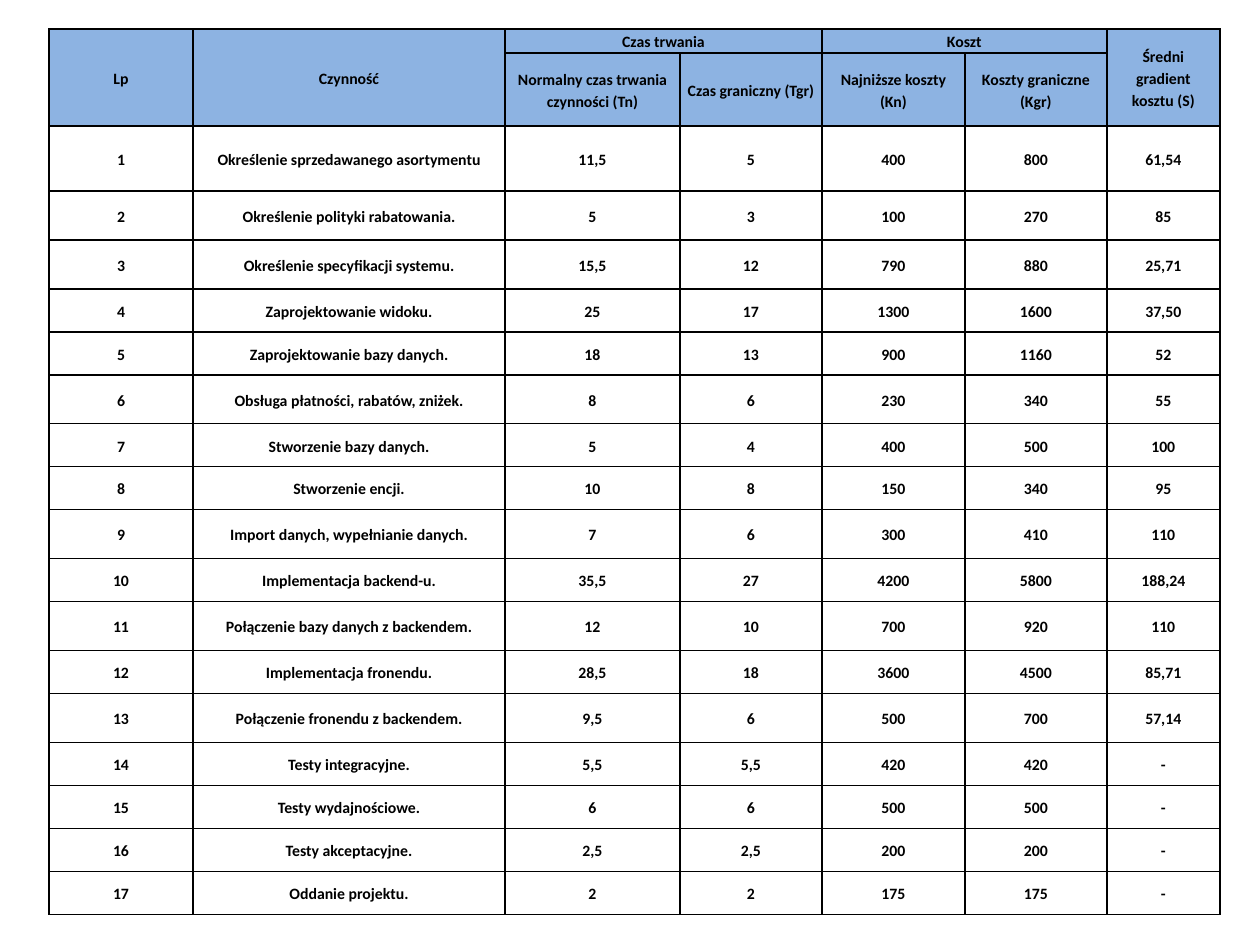
from lxml import etree
from pptx import Presentation
from pptx.dml.color import RGBColor
from pptx.enum.text import MSO_ANCHOR, PP_ALIGN
from pptx.oxml.ns import qn
from pptx.util import Pt

CENTER = PP_ALIGN.CENTER
MIDDLE = MSO_ANCHOR.MIDDLE
BLACK = RGBColor(0x00, 0x00, 0x00)
HEADER_BLUE = RGBColor(0x8D, 0xB3, 0xE2)
FONT = "Calibri"
BORDER_WIDTH = Pt(1)
SIDE_MARGIN = 7
HEADER_ROWS = 2


def px(length):
    """Turn pixels, 126 to the inch, into EMU."""
    return round(length * 914400 / 126)


def add_borders(cell):
    properties = cell._tc.get_or_add_tcPr()
    for position, side in enumerate(("a:lnL", "a:lnR", "a:lnT", "a:lnB")):
        line = etree.Element(qn(side), w=str(BORDER_WIDTH))
        fill = etree.SubElement(line, qn("a:solidFill"))
        etree.SubElement(fill, qn("a:srgbClr"), val=str(BLACK))
        properties.insert(position, line)


column_widths = [144, 312, 175, 142, 143, 142, 113]
TALL, SHORT = 49, 43
row_heights = [24, 73, 65, TALL, TALL, SHORT, SHORT, TALL, SHORT, SHORT, TALL,
               SHORT, TALL, SHORT, TALL, SHORT, SHORT, SHORT, SHORT]

headers = [
    ("Lp", "Czynność", "Czas trwania", "", "Koszt", "", "Średni gradient kosztu (S)"),
    ("", "", "Normalny czas trwania czynności (Tn)", "Czas graniczny (Tgr)",
     "Najniższe koszty (Kn)", "Koszty graniczne (Kgr)", ""),
]
header_merges = [((0, 0), (1, 0)), ((0, 1), (1, 1)), ((0, 2), (0, 3)),
                 ((0, 4), (0, 5)), ((0, 6), (1, 6))]

activities = [
    ("Określenie sprzedawanego asortymentu", "11,5", "5", "400", "800", "61,54"),
    ("Określenie polityki rabatowania.", "5", "3", "100", "270", "85"),
    ("Określenie specyfikacji systemu.", "15,5", "12", "790", "880", "25,71"),
    ("Zaprojektowanie widoku.", "25", "17", "1300", "1600", "37,50"),
    ("Zaprojektowanie bazy danych.", "18", "13", "900", "1160", "52"),
    ("Obsługa płatności, rabatów, zniżek.", "8", "6", "230", "340", "55"),
    ("Stworzenie bazy danych.", "5", "4", "400", "500", "100"),
    ("Stworzenie encji.", "10", "8", "150", "340", "95"),
    ("Import danych, wypełnianie danych.", "7", "6", "300", "410", "110"),
    ("Implementacja backend-u.", "35,5", "27", "4200", "5800", "188,24"),
    ("Połączenie bazy danych z backendem.", "12", "10", "700", "920", "110"),
    ("Implementacja fronendu.", "28,5", "18", "3600", "4500", "85,71"),
    ("Połączenie fronendu z backendem.", "9,5", "6", "500", "700", "57,14"),
    ("Testy integracyjne.", "5,5", "5,5", "420", "420", "-"),
    ("Testy wydajnościowe.", "6", "6", "500", "500", "-"),
    ("Testy akceptacyjne.", "2,5", "2,5", "200", "200", "-"),
    ("Oddanie projektu.", "2", "2", "175", "175", "-"),
]
rows = headers + [(str(number), *activity)
                  for number, activity in enumerate(activities, start=1)]

presentation = Presentation()
presentation.slide_width = px(1260)
presentation.slide_height = px(945)
slide = presentation.slides.add_slide(presentation.slide_layouts[6])

schedule = slide.shapes.add_table(
    len(rows), len(column_widths), px(49), px(29),
    px(sum(column_widths)), px(sum(row_heights))).table
schedule.first_row = False
schedule.horz_banding = False
for column, width in zip(schedule.columns, column_widths):
    column.width = px(width)
for row, height in zip(schedule.rows, row_heights):
    row.height = px(height)
for first, last in header_merges:
    schedule.cell(*first).merge(schedule.cell(*last))

for row_index, texts in enumerate(rows):
    for column_index, text in enumerate(texts):
        cell = schedule.cell(row_index, column_index)
        cell.margin_left = cell.margin_right = px(SIDE_MARGIN)
        cell.margin_top = cell.margin_bottom = 0
        cell.vertical_anchor = MIDDLE
        if row_index < HEADER_ROWS:
            cell.fill.solid()
            cell.fill.fore_color.rgb = HEADER_BLUE
        else:
            cell.fill.background()
        add_borders(cell)
        if not text:
            continue
        paragraph = cell.text_frame.paragraphs[0]
        paragraph.alignment = CENTER
        paragraph.line_spacing = 1.15
        run = paragraph.add_run()
        run.text = text
        run.font.name = FONT
        run.font.size = Pt(9)
        run.font.bold = True
        run.font.color.rgb = BLACK

presentation.save("out.pptx")
